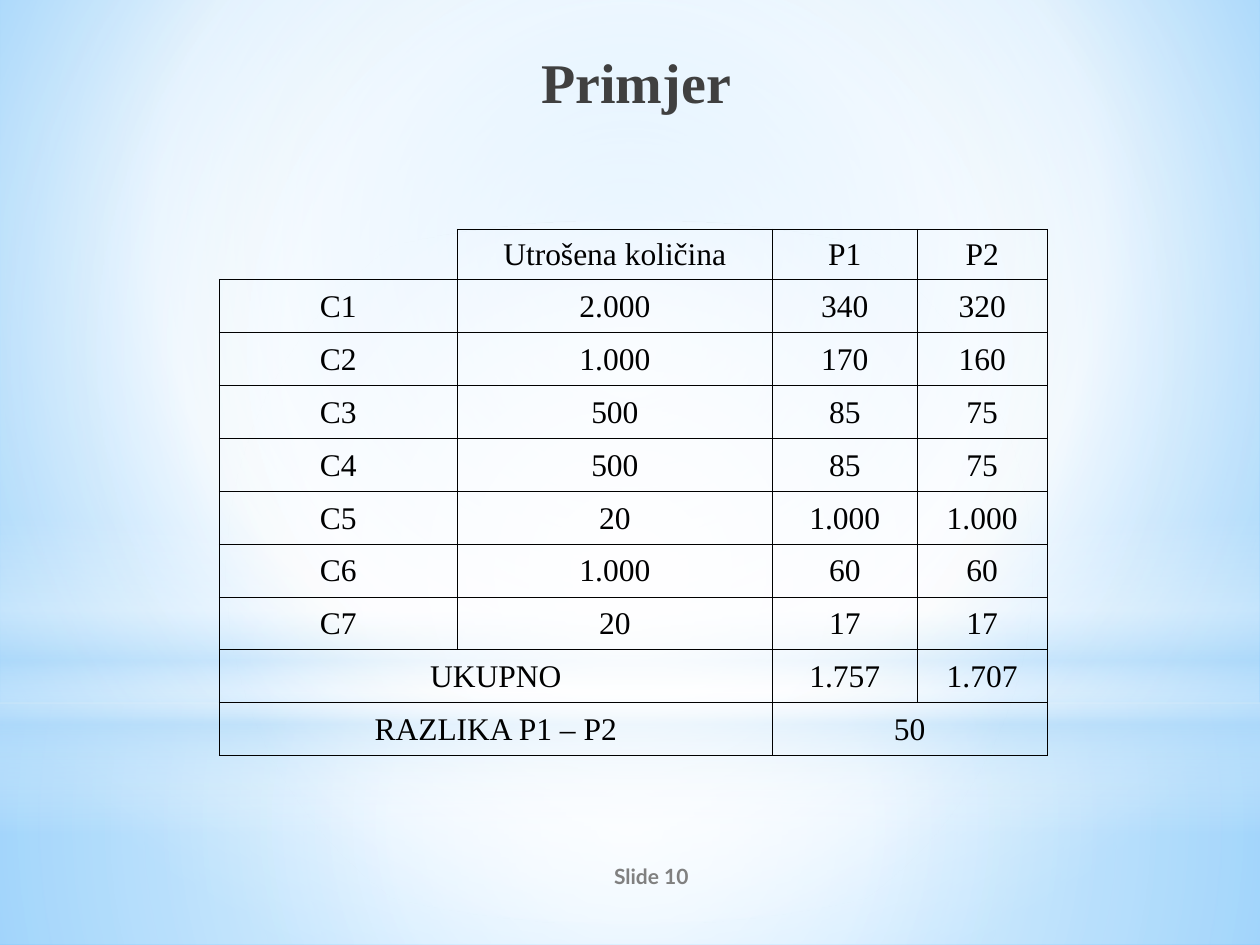
import pptx
import pptx.util
import pptx.oxml
import pptx.oxml.ns
import pptx.dml.color
import pptx.enum.shapes
import pptx.enum.text

PX = 9144  # EMU per px, 100 px to the inch
COLORS = {
    "white": "FFFFFF", "pale": "B4DCFA", "sky": "9ED5FF", "blue": "5BB9FF",
    "title": "404040", "ink": "000000", "foot": "808080",
}
NS = pptx.oxml.ns.nsdecls("a")
SHAPE = pptx.enum.shapes.MSO_SHAPE
ANCHOR = pptx.enum.text.MSO_ANCHOR


def blend(fill, stops, shade):
    """Put a gradient in place of an empty fill; stops are (percent, colour, alpha)."""
    marks = "".join(
        f'<a:gs pos="{pos * 1000}"><a:srgbClr val="{COLORS[name]}">'
        f'<a:alpha val="{alpha * 1000}"/></a:srgbClr></a:gs>'
        for pos, name, alpha in stops)
    xml = f'<a:gradFill {NS} rotWithShape="1"><a:gsLst>{marks}</a:gsLst>{shade}</a:gradFill>'
    fill.getparent().replace(fill, pptx.oxml.parse_xml(xml))


def style(para, text, face, size, color, bold=False):
    para.text = text
    para.alignment = pptx.enum.text.PP_ALIGN.CENTER
    para.font.name = face
    para.font.size = pptx.util.Pt(size)
    para.font.bold = bold
    para.font.color.rgb = pptx.dml.color.RGBColor.from_string(COLORS[color])


deck = pptx.Presentation()
deck.slide_width, deck.slide_height = 1000 * PX, 750 * PX
slide = deck.slides.add_slide(deck.slide_layouts[5])
shapes = slide.shapes

# Background
ring = '<a:path path="circle"><a:fillToRect l="{}" t="{}" r="{}" b="{}"/></a:path>'
mid = ring.format(50000, 50000, 50000, 50000)
down = '<a:lin ang="5400000" scaled="0"/>'
slide.background.fill.background()
blend(slide.element.find(".//" + pptx.oxml.ns.qn("p:bgPr"))[0],
      [(0, "sky", 100), (60, "white", 100), (100, "blue", 100)],
      ring.format(20000, 10000, 20000, 60000))

# Soft light layers: kind, top, height, shade, stops
layers = [
    (SHAPE.RECTANGLE, 558, 192, mid,
     [(0, "white", 91), (37, "white", 76), (100, "pale", 79)]),
    (SHAPE.RECTANGLE, 0, 558, mid,
     [(0, "white", 89), (48, "white", 62), (100, "pale", 79)]),
    (SHAPE.RECTANGLE, 412, 250, down,
     [(0, "white", 0), (29, "white", 30), (45, "pale", 40),
      (55, "white", 26), (65, "pale", 60), (100, "white", 0)]),
    (SHAPE.OVAL, 175, 558, mid, [(0, "white", 100), (56, "white", 0)]),
]
for kind, top, high, shade, stops in layers:
    layer = shapes.add_shape(kind, 0, top * PX, 1000 * PX, high * PX)
    layer.shadow.inherit = False
    layer.line.fill.background()
    layer.fill.background()
    blend(layer.element.spPr.find(pptx.oxml.ns.qn("a:noFill")), stops, shade)

# Title, brought in front of the layers
title = shapes.title
title.element.getparent().append(title.element)
title.left, title.top, title.width, title.height = 116 * PX, 27 * PX, 778 * PX, 125 * PX
frame = title.text_frame
frame.vertical_anchor = ANCHOR.TOP
frame.margin_top = 11 * PX
style(frame.paragraphs[0], "Primjer", "Times New Roman", 32, "title", True)

# Table
rows = [
    ["", "Utrošena količina", "P1", "P2"],
    ["C1", "2.000", "340", "320"],
    ["C2", "1.000", "170", "160"],
    ["C3", "500", "85", "75"],
    ["C4", "500", "85", "75"],
    ["C5", "20", "1.000", "1.000"],
    ["C6", "1.000", "60", "60"],
    ["C7", "20", "17", "17"],
    ["UKUPNO", "", "1.757", "1.707"],
    ["RAZLIKA P1 – P2", "", "50", ""],
]
wides = [189, 250, 115, 103]
table = shapes.add_table(len(rows), len(wides), 174 * PX, 182 * PX,
                         sum(wides) * PX, 418 * PX).table
table.first_row = table.horz_banding = False
for col, wide in zip(table.columns, wides):
    col.width = wide * PX
for i, row in enumerate(table.rows):
    row.height = (42 if i else 40) * PX

solid = f'<a:solidFill><a:srgbClr val="{COLORS["ink"]}"/></a:solidFill>'
for i, row in enumerate(rows):
    for j, text in enumerate(row):
        cell = table.cell(i, j)
        cell.fill.background()
        cell.vertical_anchor = ANCHOR.MIDDLE
        cell.margin_left = cell.margin_right = cell.margin_top = PX
        cell.margin_bottom = 0
        style(cell.text_frame.paragraphs[0], text, "Times New Roman", 18, "ink")
        for k, side in enumerate("LRTB"):
            bare = i == j == 0 and side in "LT"  # open corner
            paint = "<a:noFill/>" if bare else solid
            edge = f'<a:ln{side} {NS} w="6350">{paint}</a:ln{side}>'
            cell._tc.tcPr.insert(k, pptx.oxml.parse_xml(edge))
for i, j in [(8, 0), (9, 0), (9, 2)]:
    table.cell(i, j).merge(table.cell(i, j + 1))

# Slide number
foot = shapes.add_textbox(417 * PX, 675 * PX, 200 * PX, 40 * PX).text_frame
foot.word_wrap = True
foot.vertical_anchor = ANCHOR.MIDDLE
style(foot.paragraphs[0], "Slide 10", "Lato", 12, "foot", True)

deck.save("out.pptx")
